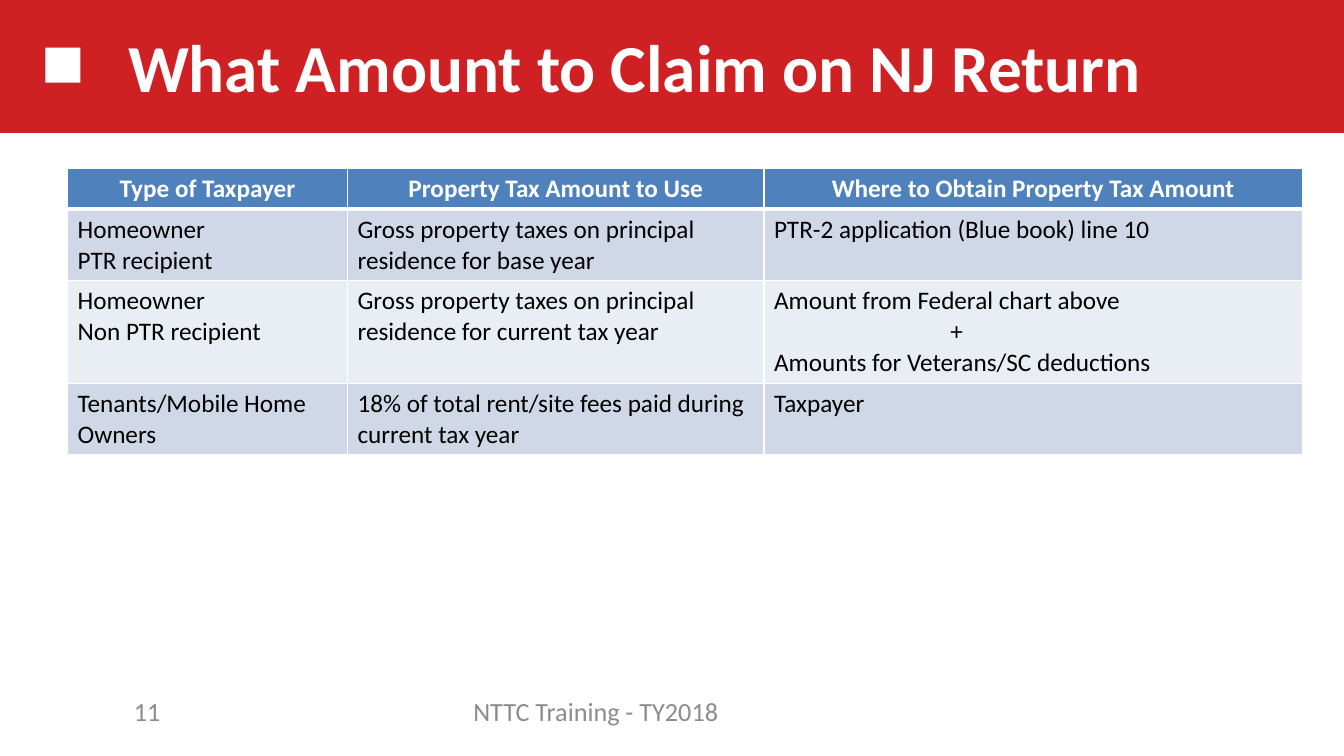
from pptx import Presentation
from pptx.dml.color import RGBColor
from pptx.enum.shapes import MSO_SHAPE as SHAPE
from pptx.enum.text import MSO_ANCHOR as ANCHOR, MSO_AUTO_SIZE as AUTO, PP_ALIGN as ALIGN
from pptx.oxml import parse_xml
from pptx.oxml.ns import nsdecls
from pptx.util import Pt

COLORS = {
    "band": "CF2124", "white": "FFFFFF", "black": "000000", "footer": "8C8C8C",
    "header": "4F81BD", "odd": "D0D8E8", "even": "E9EDF4",
}
TITLE = "What Amount to Claim on NJ Return"
ROWS = [
    ["Type of Taxpayer", "Property Tax Amount to Use",
     "Where to Obtain Property Tax Amount"],
    ["Homeowner\nPTR recipient",
     "Gross property taxes on principal residence for base year",
     "PTR-2 application (Blue book) line 10"],
    ["Homeowner\nNon PTR recipient",
     "Gross property taxes on principal residence for current tax year",
     "Amount from Federal chart above\n+\nAmounts for Veterans/SC deductions"],
    ["Tenants/Mobile Home Owners",
     "18% of total rent/site fees paid during current tax year", "Taxpayer"],
]
COL_WIDTHS = [200, 297.5, 384.5]
ROW_LINES = [1, 2, 3, 2]
LINE_HEIGHT, CELL_MARGINS = 22, 7.2
PLUS_INDENT = 126
BAND_SHAPES = [(0, -0.5, 960, 95.5, "band"), (32.4, 34, 25, 25, "white")]
FOOTERS = [
    ("NTTC Training - TY2018", (273.6, 493.2, 304, 28.8), ALIGN.CENTER),
    ("11", (48.24, 493.2, 73.4, 28.8), ALIGN.RIGHT),
]


def rgb(name):
    return RGBColor.from_string(COLORS[name])


def style(p, size, color, bold=False, align=ALIGN.LEFT):
    p.alignment = align
    for key, value in {"name": "Calibri", "size": Pt(size), "bold": bold}.items():
        setattr(p.font, key, value)
    p.font.color.rgb = rgb(color)


def add_borders(cell, row):
    """White cell lines, with a thicker one below the header row."""
    thick = {0: "B", 1: "T"}.get(row)
    for side in "LRTB":
        width = Pt(3 if side == thick else 1)
        cell._tc.get_or_add_tcPr().append(parse_xml(
            f'<a:ln{side} {nsdecls("a")} w="{width}"><a:solidFill>'
            f'<a:srgbClr val="{COLORS["white"]}"/></a:solidFill></a:ln{side}>'))


def add_title(s):
    title = s.shapes.title
    for x, y, w, h, color in BAND_SHAPES:
        sp = s.shapes.add_shape(SHAPE.RECTANGLE, Pt(x), Pt(y), Pt(w), Pt(h))
        sp.shadow.inherit = False
        sp.fill.solid()
        sp.fill.fore_color.rgb = rgb(color)
        sp.line.fill.background()
        title._element.addprevious(sp._element)
    title.left, title.top, title.width, title.height = map(Pt, (84.24, 2.2, 767.5, 90))
    tf = title.text_frame
    tf.text = TITLE
    tf.auto_size, tf.vertical_anchor = AUTO.NONE, ANCHOR.MIDDLE
    style(tf.paragraphs[0], 48, "white", bold=True)


def add_tax_table(s):
    heights = [n * LINE_HEIGHT + CELL_MARGINS for n in ROW_LINES]
    table = s.shapes.add_table(len(ROWS), len(COL_WIDTHS), Pt(48.24), Pt(120.24),
                               Pt(sum(COL_WIDTHS)), Pt(sum(heights))).table
    for col, width in zip(table.columns, COL_WIDTHS):
        col.width = Pt(width)
    for r, texts in enumerate(ROWS):
        table.rows[r].height = Pt(heights[r])
        is_header = r == 0
        fill = "header" if is_header else ("even", "odd")[r % 2]
        for c, text in enumerate(texts):
            cell = table.cell(r, c)
            add_borders(cell, r)
            cell.fill.solid()
            cell.fill.fore_color.rgb = rgb(fill)
            cell.text = text
            for p in cell.text_frame.paragraphs:
                if p.text == "+":
                    p._p.get_or_add_pPr().set("marL", str(Pt(PLUS_INDENT)))
                style(p, 18, "white" if is_header else "black", is_header,
                      ALIGN.CENTER if is_header else ALIGN.LEFT)


def add_footers(s):
    for text, box, align in FOOTERS:
        tf = s.shapes.add_textbox(*map(Pt, box)).text_frame
        tf.word_wrap, tf.vertical_anchor = True, ANCHOR.MIDDLE
        tf.text = text
        style(tf.paragraphs[0], 18.7, "footer", align=align)


def main():
    prs = Presentation()
    prs.slide_width, prs.slide_height = Pt(960), Pt(540)
    s = prs.slides.add_slide(prs.slide_layouts[5])
    add_title(s)
    add_tax_table(s)
    add_footers(s)
    prs.save("out.pptx")


if __name__ == "__main__":
    main()
